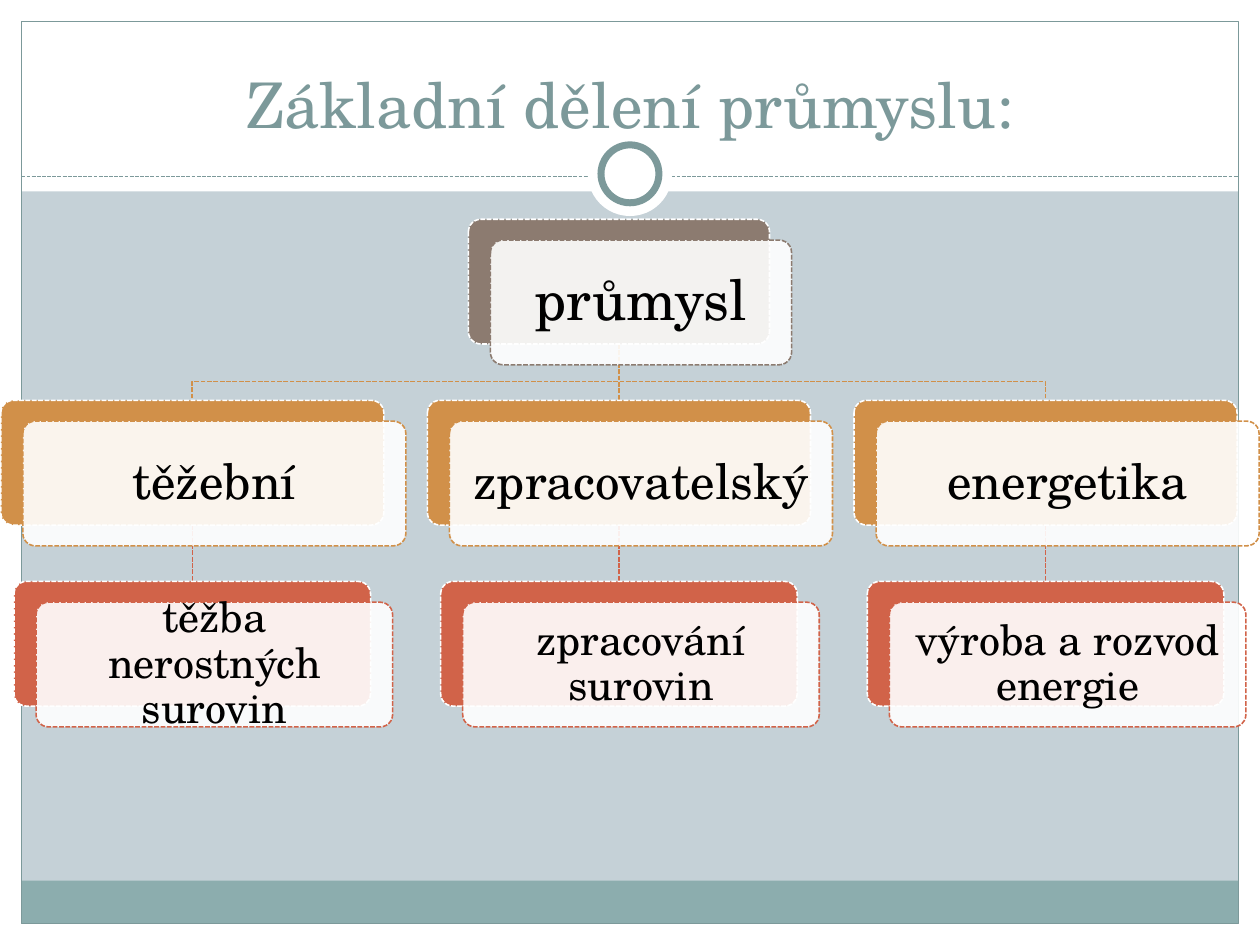
from dataclasses import dataclass

from lxml.etree import SubElement
from pptx import Presentation
from pptx.dml.color import RGBColor
from pptx.enum.dml import MSO_LINE
from pptx.enum.shapes import MSO_CONNECTOR, MSO_SHAPE
from pptx.enum.text import MSO_ANCHOR, MSO_AUTO_SIZE, PP_ALIGN
from pptx.oxml.ns import qn
from pptx.util import Inches, Pt


@dataclass(frozen=True)
class Theme:
    font: str = "TeX Gyre Schola"
    background: str = "C5D1D7"
    paper: str = "FFFFFF"
    accent: str = "7C999A"
    footer: str = "8CADAE"
    text: str = "000000"
    levels: tuple = ("8C7B70", "D19049", "D16349")
    level_sizes: tuple = (32, 28, 24)
    level_insets: tuple = (0.13, 0.12, 0.1)
    title_size: int = 36
    thin: float = 0.75
    dash: float = 0.9
    ring: float = 4


THEME = Theme()
ROOT = "průmysl"
BRANCHES = [
    ("těžební", "těžba nerostných surovin"),
    ("zpracovatelský", "zpracování surovin"),
    ("energetika", "výroba a rozvod energie"),
]

# Chart proportions, in inches
WIDTHS = (2.39, 3.04, 2.83)
CARD_H = 0.99
ROW_STEP = 1.437
COLUMN_STEP = 3.386
SHIFT_X, SHIFT_Y = 0.175, 0.165
BEND = 0.15


def rgb(value):
    return RGBColor.from_string(value)


def style_line(line, color, width, dashed=False):
    line.color.rgb = rgb(color)
    line.width = Pt(width)
    if dashed:
        line.dash_style = MSO_LINE.SQUARE_DOT


def add_box(s, kind, box, fill=None, line=None, width=THEME.thin, dashed=False):
    sp = s.shapes.add_shape(kind, *map(Inches, box))
    sp.shadow.inherit = False
    if fill:
        sp.fill.solid()
        sp.fill.fore_color.rgb = rgb(fill)
    else:
        sp.fill.background()
    if line:
        style_line(sp.line, line, width, dashed)
    else:
        sp.line.fill.background()
    return sp


def add_line(s, start, end, color, width):
    cx = s.shapes.add_connector(
        MSO_CONNECTOR.STRAIGHT, *map(Inches, (*start, *end)))
    style_line(cx.line, color, width, dashed=True)
    SubElement(cx.element.spPr, qn("a:effectLst"))


def style_run(p, size, color):
    for r in p.runs:
        r.font.name = THEME.font
        r.font.size = Pt(size)
        r.font.color.rgb = rgb(color)


def add_frame(s, box):
    """White margins and header, footer band, outline and ring."""
    x, y, w, h = box
    m = 0.17
    right, bottom, rule_y = x + w - m, y + h - m, y + 1.4
    for margin in [(x, bottom, w, m), (x, y, w, 1.52),
                   (x, y, m, h), (right, y, m, h)]:
        add_box(s, MSO_SHAPE.RECTANGLE, margin, THEME.paper)
    add_box(s, MSO_SHAPE.RECTANGLE, (x + m, bottom - 0.34, w - 2 * m, 0.34),
            THEME.footer)
    add_box(s, MSO_SHAPE.RECTANGLE, (x + m, y + m, w - 2 * m, h - 2 * m),
            line=THEME.accent)
    add_line(s, (x + m, rule_y), (right, rule_y), THEME.accent, THEME.thin)
    for size, line in [(0.67, None), (0.46, THEME.accent)]:
        ring = (x + (w - size) / 2, y + 1.38 - size / 2, size, size)
        add_box(s, MSO_SHAPE.OVAL, ring, THEME.paper, line, THEME.ring)


def add_title(s, box, text):
    sp = s.shapes.title
    sp.left, sp.top, sp.width, sp.height = map(Inches, box)
    s.shapes.element.append(sp.element)  # bring in front of the header
    tf = sp.text_frame
    tf.text = text
    tf.auto_size = MSO_AUTO_SIZE.NONE
    tf.vertical_anchor = MSO_ANCHOR.BOTTOM
    p = tf.paragraphs[0]
    p.alignment = PP_ALIGN.CENTER
    style_run(p, THEME.title_size, THEME.accent)


def add_card(s, center, top, level, text):
    """Coloured card with a translucent text card shifted over it."""
    color, width = THEME.levels[level], WIDTHS[level]
    left = center - width / 2
    back = add_box(s, MSO_SHAPE.ROUNDED_RECTANGLE, (left, top, width, CARD_H),
                   color, THEME.paper, THEME.dash, True)
    front = add_box(s, MSO_SHAPE.ROUNDED_RECTANGLE,
                    (left + SHIFT_X, top + SHIFT_Y, width, CARD_H),
                    THEME.paper, color, THEME.dash, True)
    for sp in (back, front):
        sp.adjustments[0] = 0.1
    fill = front.element.spPr.find(qn("a:solidFill"))
    SubElement(fill[0], qn("a:alpha"), val="90000")

    tf = front.text_frame
    tf.text = text
    tf.word_wrap = True
    tf.vertical_anchor = MSO_ANCHOR.MIDDLE
    inset = Inches(THEME.level_insets[level])
    tf.margin_left = tf.margin_right = tf.margin_top = tf.margin_bottom = inset
    p = tf.paragraphs[0]
    p.alignment = PP_ALIGN.CENTER
    p.line_spacing = 0.9
    style_run(p, THEME.level_sizes[level], THEME.text)


def add_elbow(s, start, end, color):
    bend_y = end[1] - BEND
    points = [start, (start[0], bend_y), (end[0], bend_y), end]
    pen, *rest = [tuple(map(Inches, point)) for point in points]
    builder = s.shapes.build_freeform(*pen)
    builder.add_line_segments(rest, close=False)
    sp = builder.convert_to_shape()
    sp.shadow.inherit = False
    sp.fill.background()
    style_line(sp.line, color, THEME.dash, dashed=True)


def add_hierarchy(s, box, root, branches):
    x, y, w, _ = box
    middle = x + (w - SHIFT_X) / 2
    tops = [y + ROW_STEP * level for level in range(3)]
    bottoms = [top + CARD_H for top in tops]
    centers = [middle + (i - (len(branches) - 1) / 2) * COLUMN_STEP
               for i in range(len(branches))]

    # Connectors lie behind the cards
    for center in centers:
        add_line(s, (center, bottoms[1]), (center, tops[2]),
                 THEME.levels[2], THEME.dash)
        start, end = (middle, bottoms[0]), (center, tops[1])
        if center == middle:
            add_line(s, start, end, THEME.levels[1], THEME.dash)
        else:
            add_elbow(s, start, end, THEME.levels[1])

    add_card(s, middle, tops[0], 0, root)
    for center, branch in zip(centers, branches):
        for level, text in enumerate(branch, start=1):
            add_card(s, center, tops[level], level, text)


def main():
    prs = Presentation()
    prs.slide_width, prs.slide_height = Inches(10), Inches(7.5)
    s = prs.slides.add_slide(prs.slide_layouts[5])
    s.background.fill.solid()
    s.background.fill.fore_color.rgb = rgb(THEME.background)
    add_frame(s, (0, 0, 10, 7.5))
    add_title(s, (0.5, 0.17, 9, 1), "Základní dělení průmyslu:")
    add_hierarchy(s, (0, 1.74, 10, 4.03), ROOT, BRANCHES)
    prs.save("out.pptx")


if __name__ == "__main__":
    main()
